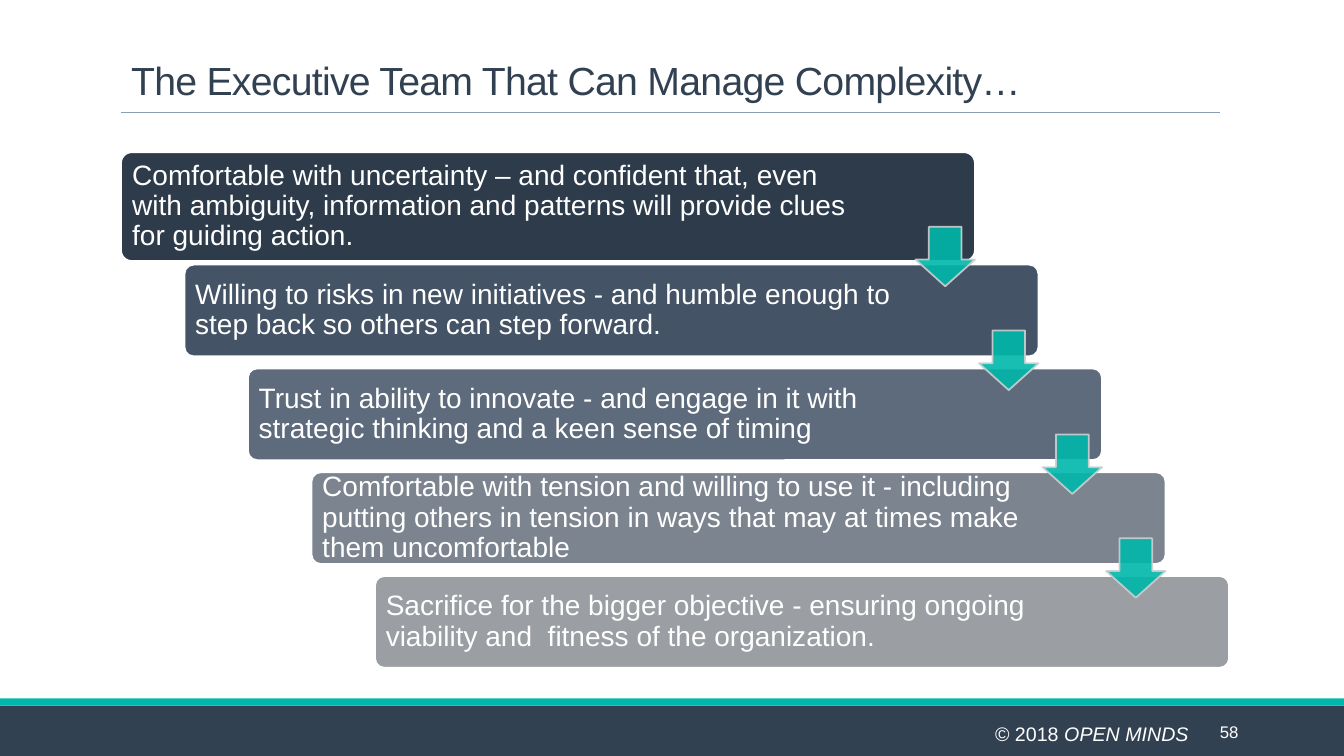
import pptx
import pptx.util
import pptx.dml.color
import pptx.enum.shapes
import pptx.enum.text
import pptx.oxml
import pptx.oxml.ns

Inches, Pt = pptx.util.Inches, pptx.util.Pt
SHAPE = pptx.enum.shapes.MSO_SHAPE
ALIGN = pptx.enum.text.PP_ALIGN
ANCHOR = pptx.enum.text.MSO_ANCHOR
FIT = pptx.enum.text.MSO_AUTO_SIZE

# Content
TITLE = "The Executive Team That Can Manage Complexity…"
COPYRIGHT = [("© 2018 ", False), ("OPEN MINDS", True)]
PAGE = "58"
# Each step: wording, card colour, card height, right text inset
STEPS = [
    ("Comfortable with uncertainty – and confident that, even with ambiguity, "
     "information and patterns will provide clues for guiding action.", "step1", 1.08, 1.12),
    ("Willing to risks in new initiatives - and humble enough to step back "
     "so others can step forward.", "step2", 0.91, 1.3),
    ("Trust in ability to innovate - and engage in it with strategic thinking "
     "and a keen sense of timing", "step3", 0.91, 1.3),
    ("Comfortable with tension and willing to use it - including putting others "
     "in tension in ways that may at times make them uncomfortable", "step4", 0.91, 1.3),
    ("Sacrifice for the bigger objective - ensuring ongoing viability and  "
     "fitness of the organization.", "step5", 0.91, 1.3),
]
COLORS = {
    "navy": "324152", "teal": "00B7AA", "rule": "8A9FB7", "white": "FFFFFF",
    "arrow_edge": "CECFD1", "step1": "2D3B4A", "step2": "445365",
    "step3": "5E6B7C", "step4": "7C8490", "step5": "9B9EA2",
}

# Layout, in inches
WIDTH, HEIGHT = 13.33, 7.5
LEFT, RULE_RIGHT, RULE_Y = 1.2, 12.1, 1.11
FOOTER_TOP, STRIPE = 7, 0.07
CARD_WIDTH, FIRST_MIDDLE = 8.47, 2.05
STEP_X, STEP_Y = 0.63, 1.03
ARROW, ARROW_TOP = 0.59, 2.25


def rgb(name):
    return pptx.dml.color.RGBColor.from_string(COLORS[name])


def apply(target, formats):
    for key, value in formats.items():
        setattr(target, key, value)


def box(*lengths):
    return [Inches(length) for length in lengths]


def add_block(kind, place, fill, edge=None, adjust=()):
    block = slide.shapes.add_shape(kind, *box(*place))
    block.shadow.inherit = False
    block.fill.solid()
    block.fill.fore_color.rgb = rgb(fill)
    if edge:
        block.line.color.rgb = rgb(edge)
        block.line.width = Pt(1.25)
    else:
        block.line.fill.background()
    for index, value in enumerate(adjust):
        block.adjustments[index] = value
    return block


def write(paragraph, wording, size, color="white", italic=None):
    run = paragraph.add_run()
    run.text = wording
    apply(run.font, {"name": "Arial", "size": Pt(size), "italic": italic})
    run.font.color.rgb = rgb(color)
    return run


def add_label(place, formats):
    frame = slide.shapes.add_textbox(*box(*place)).text_frame
    apply(frame, {"word_wrap": True, **formats})
    return frame.paragraphs[0]


deck = pptx.Presentation()
apply(deck, {"slide_width": Inches(WIDTH), "slide_height": Inches(HEIGHT)})
slide = deck.slides.add_slide(deck.slide_layouts[5])

# Footer band and rule under the title
add_block(SHAPE.RECTANGLE, (0, FOOTER_TOP, WIDTH, HEIGHT - FOOTER_TOP), "navy")
add_block(SHAPE.RECTANGLE, (0, FOOTER_TOP - STRIPE, WIDTH, STRIPE), "teal")
rule = slide.shapes.add_connector(
    pptx.enum.shapes.MSO_CONNECTOR.STRAIGHT, *box(LEFT, RULE_Y, RULE_RIGHT, RULE_Y))
rule.line.color.rgb = rgb("rule")
rule.line.width = Pt(0.5)
pptx.oxml.ns.qn("a:effectLst")
rule.element.spPr.append(pptx.oxml.parse_xml(
    '<a:effectLst xmlns:a="http://schemas.openxmlformats.org/drawingml/2006/main"/>'))

notice = add_label((LEFT, 7.12, 10.68, 0.32), {
    "auto_size": FIT.SHAPE_TO_FIT_TEXT, "margin_top": Inches(0.04),
    "margin_bottom": Inches(0.04), "margin_left": Inches(0.09), "margin_right": Inches(0.09)})
notice.alignment = ALIGN.RIGHT
for wording, italic in COPYRIGHT:
    write(notice, wording, 14, italic=italic)

# Title
title = slide.shapes.title
apply(title, dict(zip(("left", "top", "width", "height"), box(LEFT, 0.31, 11, 0.77))))
apply(title.text_frame, {"vertical_anchor": ANCHOR.BOTTOM, "auto_size": FIT.NONE,
                         "word_wrap": True})
heading = title.text_frame.paragraphs[0]
apply(heading, {"alignment": ALIGN.LEFT, "line_spacing": 0.85})
write(heading, TITLE, 28, "navy").font._element.set("spc", "-50")

# Staircase of cards
for i, (wording, fill, height, right_inset) in enumerate(STEPS):
    top = FIRST_MIDDLE + i * STEP_Y - height / 2
    card = add_block(SHAPE.ROUNDED_RECTANGLE, (LEFT + i * STEP_X, top, CARD_WIDTH, height),
                     fill, "white", [0.1])
    apply(card.text_frame, {
        "word_wrap": True, "vertical_anchor": ANCHOR.MIDDLE, "margin_left": Inches(0.08),
        "margin_top": Inches(0.08), "margin_bottom": Inches(0.08),
        "margin_right": Inches(right_inset)})
    statement = card.text_frame.paragraphs[0]
    apply(statement, {"alignment": ALIGN.LEFT, "line_spacing": 0.9})
    write(statement, wording, 20)

# Arrows between cards, flush with the right edge of the upper card
for i in range(len(STEPS) - 1):
    x = LEFT + CARD_WIDTH - ARROW + i * STEP_X
    arrow = add_block(SHAPE.DOWN_ARROW, (x, ARROW_TOP + i * STEP_Y, ARROW, ARROW),
                      "teal", "arrow_edge", [0.55, 0.45])
    for color in arrow.element.spPr.iter(pptx.oxml.ns.qn("a:srgbClr")):
        color.append(pptx.oxml.parse_xml(
            '<a:alpha xmlns:a="http://schemas.openxmlformats.org/drawingml/2006/main"'
            ' val="90000"/>'))

# Page number
number = add_label((12, 7.06, 1.43, 0.4), {"vertical_anchor": ANCHOR.MIDDLE})
write(number, PAGE, 12)

deck.save("out.pptx")
